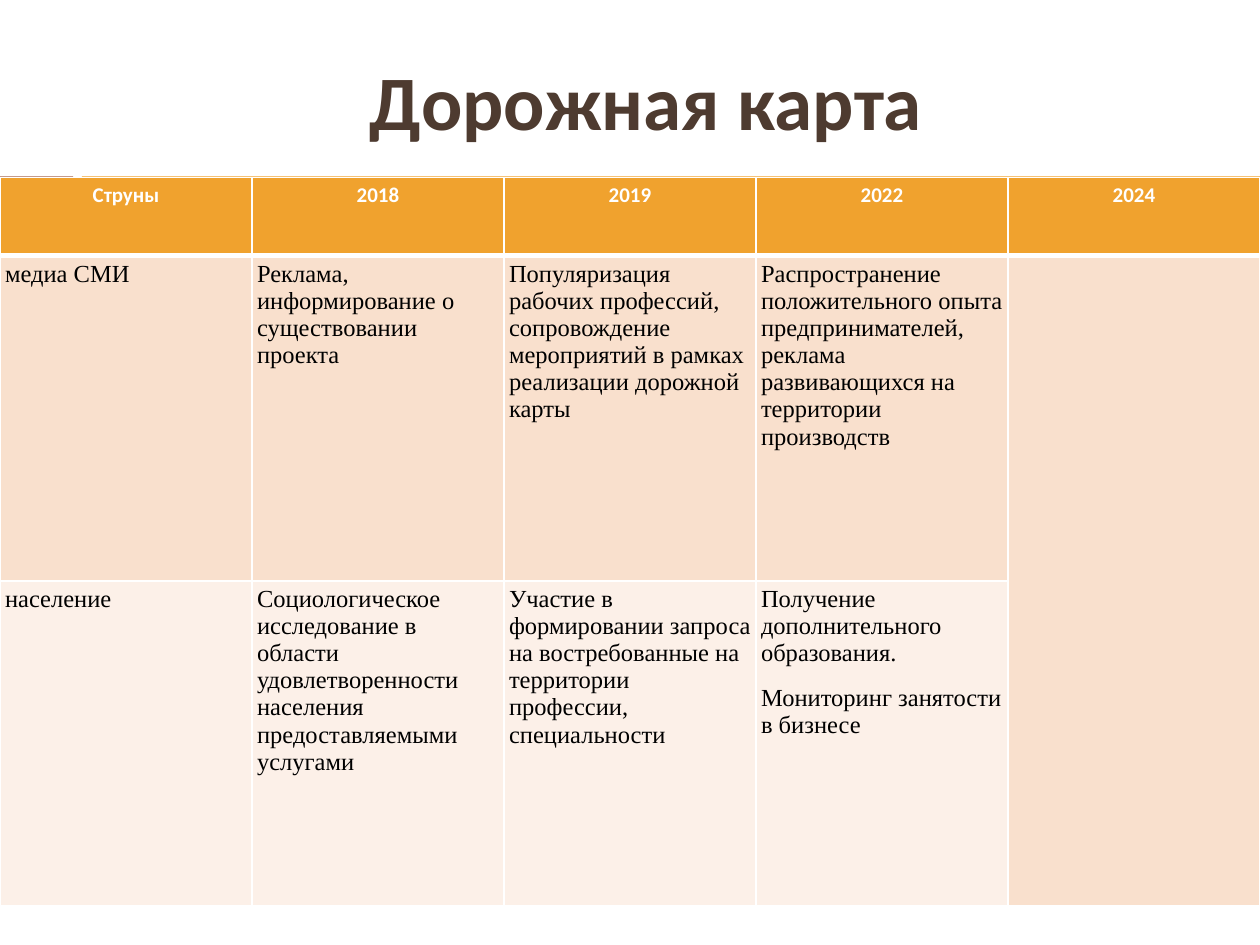
from lxml.etree import SubElement
from pptx import Presentation
from pptx.dml.color import RGBColor
from pptx.enum.shapes import MSO_SHAPE
from pptx.enum.text import MSO_ANCHOR, PP_ALIGN
from pptx.oxml.ns import qn
from pptx.util import Inches, Pt

WHITE = RGBColor(0xFF, 0xFF, 0xFF)
BLACK = RGBColor(0x00, 0x00, 0x00)
BROWN = RGBColor(0x4E, 0x3B, 0x30)
RUST = RGBColor(0xA5, 0x64, 0x4E)
ORANGE = RGBColor(0xF0, 0xA2, 0x2E)
PEACH = RGBColor(0xF9, 0xE0, 0xCD)
CREAM = RGBColor(0xFC, 0xF0, 0xE8)

ROW_FILLS = [ORANGE, PEACH, CREAM]
ROW_HEIGHTS = [0.62, 2.58, 2.58]
COLUMN_WIDTH = 2
ROADMAP = [
    ["Струны", "2018", "2019", "2022", "2024"],
    [
        "медиа СМИ",
        "Реклама, информирование о существовании проекта",
        "Популяризация рабочих профессий, сопровождение мероприятий в рамках "
        "реализации дорожной карты",
        "Распространение положительного опыта предпринимателей, реклама "
        "развивающихся на территории производств",
        "",
    ],
    [
        "население",
        "Социологическое исследование в области удовлетворенности населения "
        "предоставляемыми услугами",
        "Участие в формировании запроса на востребованные на территории "
        "профессии, специальности",
        "Получение дополнительного образования.\nМониторинг занятости в бизнесе",
        "",
    ],
]


def format_runs(paragraph, font_name, size, color, bold):
    """Apply one font to every run of a paragraph."""
    for run in paragraph.runs:
        run.font.name = font_name
        run.font.size = Pt(size)
        run.font.color.rgb = color
        run.font.bold = bold


def add_bar(slide, left, width, color):
    """Add one plain bar of the band under the title."""
    bar = slide.shapes.add_shape(
        MSO_SHAPE.RECTANGLE, Inches(left), Inches(1.4), Inches(width), Inches(0.25)
    )
    bar.shadow.inherit = False
    bar.fill.solid()
    bar.fill.fore_color.rgb = color
    bar.line.fill.background()


def add_title(slide, text):
    """Place and format the title placeholder."""
    title = slide.shapes.title
    title.left, title.top = Inches(0.67), Inches(0.25)
    title.width, title.height = Inches(8.92), Inches(1.08)
    title.text_frame.text = text
    title.text_frame.vertical_anchor = MSO_ANCHOR.MIDDLE
    paragraph = title.text_frame.paragraphs[0]
    paragraph.alignment = PP_ALIGN.CENTER
    format_runs(paragraph, "Calibri", 44, BROWN, True)


def set_borders(cell, top, bottom):
    """Draw white cell borders with the given top and bottom widths in points."""
    properties = cell._tc.get_or_add_tcPr()
    for side, width in (("L", 1), ("R", 1), ("T", top), ("B", bottom)):
        line = SubElement(properties, qn(f"a:ln{side}"), w=str(Pt(width)))
        fill = SubElement(line, qn("a:solidFill"))
        SubElement(fill, qn("a:srgbClr"), val=str(WHITE))


def fill_cell(cell, text, row_index):
    """Write and format one cell according to its row."""
    is_header = row_index == 0
    set_borders(cell, 3 if row_index == 1 else 1, 3 if is_header else 1)
    cell.fill.solid()
    cell.fill.fore_color.rgb = ROW_FILLS[row_index]
    cell.margin_left = cell.margin_right = Inches(0.04)
    cell.margin_top = cell.margin_bottom = Inches(0.04)
    cell.text_frame.text = text
    for paragraph in cell.text_frame.paragraphs:
        paragraph.space_after = Pt(10)
        if is_header:
            paragraph.alignment = PP_ALIGN.CENTER
            format_runs(paragraph, "Calibri", 12, WHITE, True)
        else:
            format_runs(paragraph, "Times New Roman", 14, BLACK, False)


def add_roadmap_table(slide):
    """Add the roadmap table with its last column merged below the header."""
    column_count = len(ROADMAP[0])
    table = slide.shapes.add_table(
        len(ROADMAP), column_count, Inches(0), Inches(1.41),
        Inches(COLUMN_WIDTH * column_count), Inches(sum(ROW_HEIGHTS)),
    ).table
    for column in table.columns:
        column.width = Inches(COLUMN_WIDTH)
    for row_index, texts in enumerate(ROADMAP):
        table.rows[row_index].height = Inches(ROW_HEIGHTS[row_index])
        for column_index, text in enumerate(texts):
            fill_cell(table.cell(row_index, column_index), text, row_index)
    last_column = column_count - 1
    table.cell(1, last_column).merge(table.cell(2, last_column))


def main():
    """Build and save the roadmap slide."""
    presentation = Presentation()
    presentation.slide_width = Inches(10)
    presentation.slide_height = Inches(7.5)
    slide = presentation.slides.add_slide(presentation.slide_layouts[5])
    add_bar(slide, 0, 0.58, RUST)
    add_bar(slide, 0.65, 9.35, ORANGE)
    add_title(slide, "Дорожная карта")
    add_roadmap_table(slide)
    presentation.save("out.pptx")


if __name__ == "__main__":
    main()
